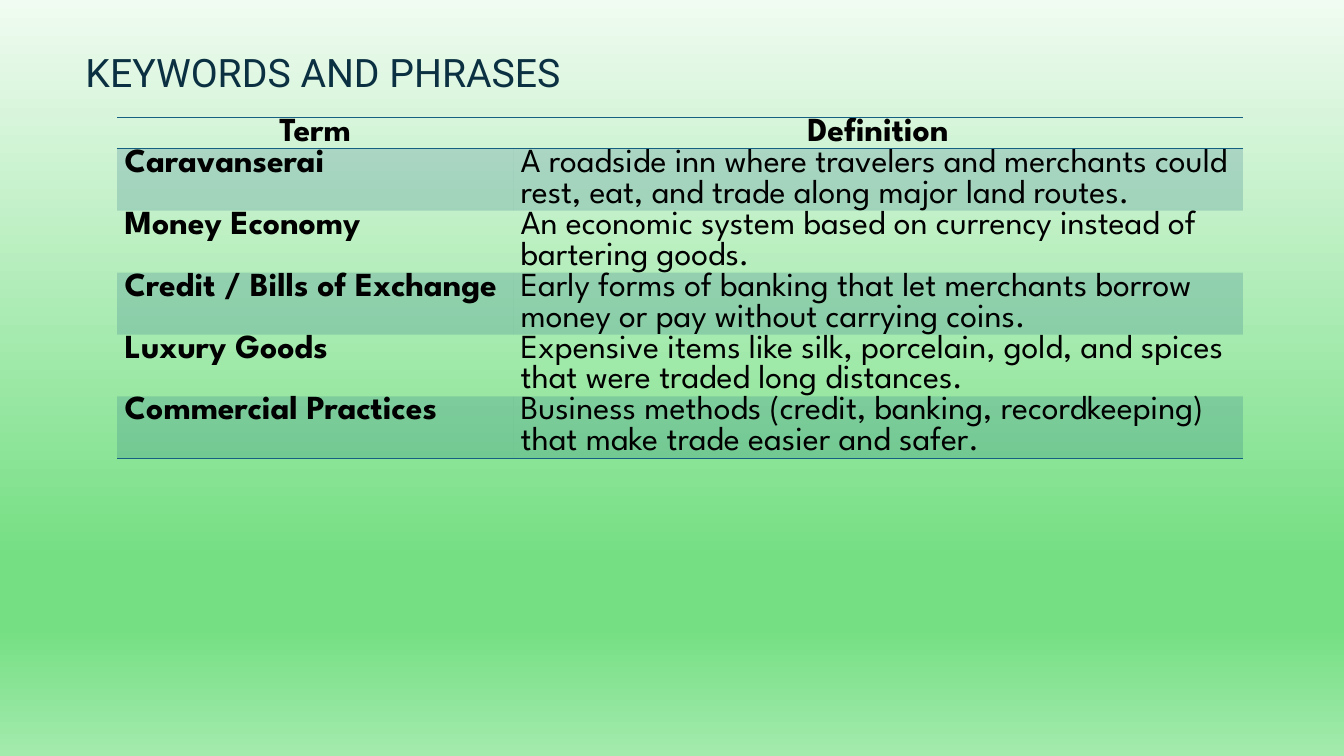
"""Build a slide with a two-column table of trade keywords."""
from dataclasses import dataclass

from lxml import etree
from pptx import Presentation
from pptx.dml.color import RGBColor
from pptx.enum.text import MSO_ANCHOR, MSO_AUTO_SIZE, PP_ALIGN
from pptx.oxml.ns import qn
from pptx.util import Cm, Pt

LEFT, CENTER = PP_ALIGN.LEFT, PP_ALIGN.CENTER
BOTTOM, TOP = MSO_ANCHOR.BOTTOM, MSO_ANCHOR.TOP
FIXED_SIZE = MSO_AUTO_SIZE.NONE

COLORS = {
    "title": "0B3041",
    "text": "000000",
    "accent": "156082",
    "pale": "F0FBF1",
    "green": "75DF83",
    "light": "A3EAAD",
}
BACKDROP = ((0, "pale"), (74, "green"), (83, "green"), (100, "light"))
PLAIN_STYLE = "{2D5ABB26-0587-4C30-8999-92F81FD0307C}"
COLUMN_WIDTHS = (9.98, 18.39)
LINE_HEIGHT = 0.78


@dataclass(frozen=True)
class Entry:
    """A term and its definition."""

    term: str
    definition: str


HEADER = Entry("Term", "Definition")
ENTRIES = (
    Entry("Caravanserai",
          "A roadside inn where travelers and merchants could rest, eat, "
          "and trade along major land routes."),
    Entry("Money Economy",
          "An economic system based on currency instead of bartering goods."),
    Entry("Credit / Bills of Exchange",
          "Early forms of banking that let merchants borrow money or pay "
          "without carrying coins."),
    Entry("Luxury Goods",
          "Expensive items like silk, porcelain, gold, and spices that were "
          "traded long distances."),
    Entry("Commercial Practices",
          "Business methods (credit, banking, recordkeeping) that make trade "
          "easier and safer."),
)


def write_text(frame, text: str, *, font: str, size: int, color: str,
               bold: bool = False, align=LEFT, spacing: float = 1.0) -> None:
    """Write one formatted paragraph into a text frame."""
    para = frame.paragraphs[0]
    para.alignment = align
    para.line_spacing = spacing
    span = para.add_run()
    span.text = text
    span.font.name = font
    span.font.size = Pt(size)
    span.font.bold = bold
    span.font.color.rgb = RGBColor.from_string(COLORS[color])


def add_color(parent, color: str):
    """Append an RGB colour element and return it."""
    return etree.SubElement(parent, qn("a:srgbClr"), val=COLORS[color])


def paint_backdrop(page) -> None:
    """Give the page a vertical gradient background."""
    fill = page.background.fill
    fill.gradient()
    fill.gradient_angle = 270
    stops = next(page.element.iter(qn("a:gsLst")))
    for stop in list(stops):
        stops.remove(stop)
    for percent, color in BACKDROP:
        add_color(etree.SubElement(stops, qn("a:gs"), pos=str(percent * 1000)), color)


def add_title(page, text: str) -> None:
    """Place and format the title."""
    box = page.shapes.title
    box.left, box.top, box.width, box.height = Cm(1.9), Cm(0.56), Cm(27.1), Cm(1.98)
    box.text_frame.auto_size = FIXED_SIZE
    box.text_frame.vertical_anchor = BOTTOM
    write_text(box.text_frame, text, font="Roboto", size=28, color="title", spacing=0.9)


def style_cell(cell, edges: tuple[str, ...], shaded: bool) -> None:
    """Set the margins, ruled edges and fill of a cell."""
    cell.margin_left = cell.margin_right = Cm(0.19)
    cell.margin_top = cell.margin_bottom = 0
    cell.vertical_anchor = TOP
    properties = cell._tc.get_or_add_tcPr()
    for edge in edges:
        line = etree.SubElement(properties, qn(f"a:{edge}"), w=str(Pt(1)))
        add_color(etree.SubElement(line, qn("a:solidFill")), "accent")
    if shaded:
        cell.fill.solid()
        cell.fill.fore_color.rgb = RGBColor.from_string(COLORS["accent"])
        tint = properties.find(qn("a:solidFill")).find(qn("a:srgbClr"))
        etree.SubElement(tint, qn("a:alpha"), val="20000")
    else:
        cell.fill.background()


def add_keyword_table(page) -> None:
    """Draw the header and the entries, shading every other entry."""
    rows = (HEADER, *ENTRIES)
    height = LINE_HEIGHT * (1 + 2 * len(ENTRIES))
    frame = page.shapes.add_table(len(rows), len(COLUMN_WIDTHS), Cm(2.95), Cm(2.97),
                                  Cm(sum(COLUMN_WIDTHS)), Cm(height))
    table = frame.table
    table.horz_banding = False
    next(frame.element.iter(qn("a:tableStyleId"))).text = PLAIN_STYLE
    for column, width in zip(table.columns, COLUMN_WIDTHS):
        column.width = Cm(width)
    for number, entry in enumerate(rows):
        is_header = number == 0
        table.rows[number].height = Cm(LINE_HEIGHT * (1 if is_header else 2))
        edges = ("lnT", "lnB") if is_header else ()
        if number == len(ENTRIES):
            edges = ("lnB",)
        for position, text in enumerate((entry.term, entry.definition)):
            cell = table.cell(number, position)
            style_cell(cell, edges, number % 2 == 1)
            write_text(cell.text_frame, text, font="League Spartan", size=24,
                       color="text", bold=is_header or position == 0,
                       align=CENTER if is_header else LEFT)


def main() -> None:
    """Build and save the deck."""
    deck = Presentation()
    deck.slide_width, deck.slide_height = Cm(33.87), Cm(19.05)
    page = deck.slides.add_slide(deck.slide_layouts[5])
    paint_backdrop(page)
    add_title(page, "KEYWORDS AND PHRASES")
    add_keyword_table(page)
    deck.save("out.pptx")


if __name__ == "__main__":
    main()
